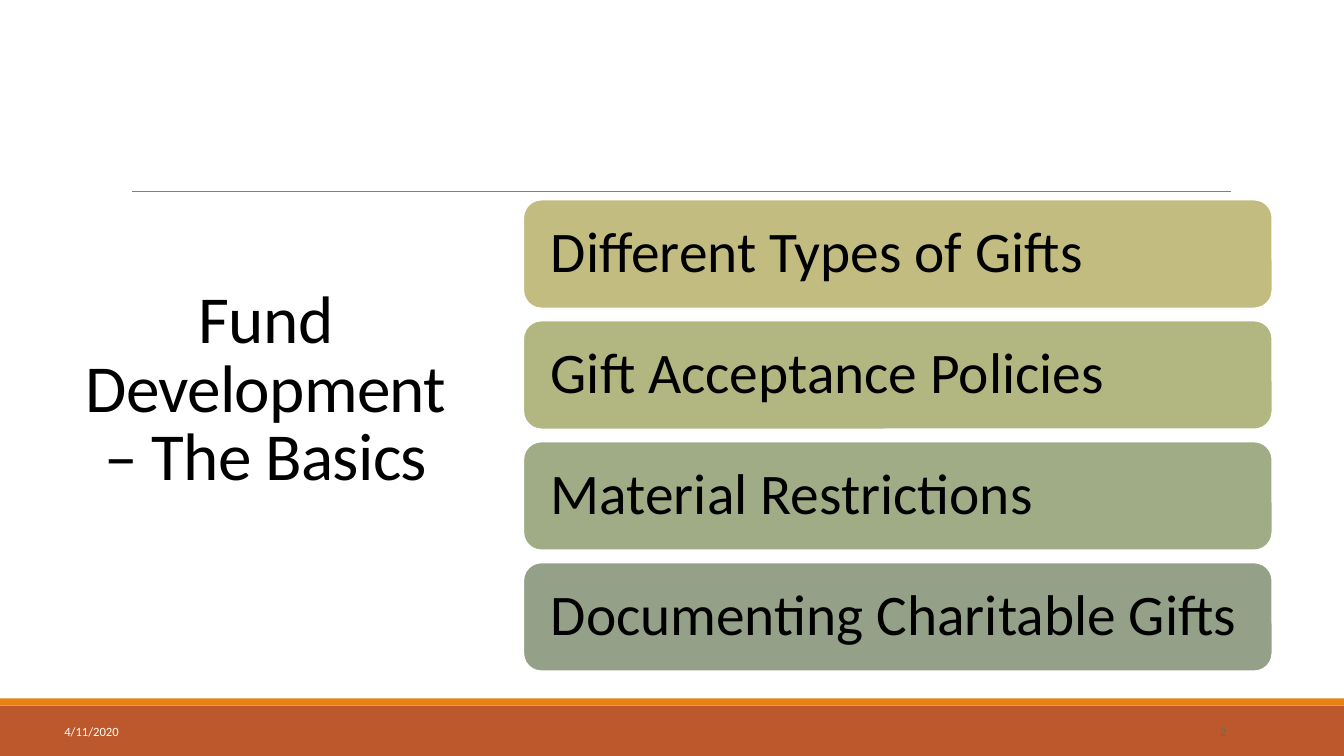
from pptx import Presentation
from pptx.dml.color import RGBColor
from pptx.enum.shapes import MSO_CONNECTOR, MSO_SHAPE
from pptx.enum.text import MSO_ANCHOR, PP_ALIGN
from pptx.oxml.ns import qn
from pptx.util import Inches, Pt
from lxml import etree

STRAIGHT = MSO_CONNECTOR.STRAIGHT
RECTANGLE = MSO_SHAPE.RECTANGLE
ROUNDED = MSO_SHAPE.ROUNDED_RECTANGLE
MIDDLE = MSO_ANCHOR.MIDDLE
LEFT, CENTER, RIGHT = PP_ALIGN.LEFT, PP_ALIGN.CENTER, PP_ALIGN.RIGHT

COLORS = {
    "white": "FFFFFF", "black": "000000", "rule": "808080",
    "footer": "BD582C", "stripe": "E48312", "number": "637052",
    "khaki": "C2BC80", "olive": "B2B782", "sage": "A0AC85", "moss": "94A088",
}
TOPICS = [
    ("Different Types of Gifts", "khaki"),
    ("Gift Acceptance Policies", "olive"),
    ("Material Restrictions", "sage"),
    ("Documenting Charitable Gifts", "moss"),
]
TOPIC_TOP, TOPIC_STEP = 1.98, 1.2


class SlideBuilder:
    """Draws styled elements on one slide."""

    def __init__(self, slide, font_name):
        self.slide = slide
        self.font_name = font_name

    def color(self, name):
        return RGBColor.from_string(COLORS[name])

    def set_text(self, shape, text, size, color, align=LEFT, spacing=1.0, inset=0.1):
        frame = shape.text_frame
        frame.word_wrap = True
        frame.vertical_anchor = MIDDLE
        frame.margin_left = frame.margin_right = Inches(inset)
        frame.text = text
        paragraph = frame.paragraphs[0]
        paragraph.alignment = align
        paragraph.line_spacing = spacing
        paragraph.font.name = self.font_name
        paragraph.font.size = Pt(size)
        paragraph.font.color.rgb = self.color(color)
        return frame

    def box(self, kind, left, top, width, height, fill, outline=None):
        shape = self.slide.shapes.add_shape(
            kind, Inches(left), Inches(top), Inches(width), Inches(height))
        shape.shadow.inherit = False
        shape.fill.solid()
        shape.fill.fore_color.rgb = self.color(fill)
        if outline:
            shape.line.color.rgb = self.color(outline)
            shape.line.width = Pt(1.25)
        else:
            shape.line.fill.background()
        return shape

    def rule(self, left, right, top):
        line = self.slide.shapes.add_connector(
            STRAIGHT, Inches(left), Inches(top), Inches(right), Inches(top))
        line.line.color.rgb = self.color("rule")
        line.line.width = Pt(0.5)
        etree.SubElement(line._element.spPr, qn("a:effectLst"))

    def title(self, text, left, top, width, height):
        title = self.slide.shapes.title
        title.left, title.top = Inches(left), Inches(top)
        title.width, title.height = Inches(width), Inches(height)
        frame = self.set_text(title, text, 48, "black", CENTER, 0.85)
        frame.margin_bottom = Inches(0.73)
        frame.paragraphs[0].runs[0]._r.get_or_add_rPr().set("spc", "-50")

    def label(self, text, left, top, width, height, color, align=LEFT):
        shape = self.slide.shapes.add_textbox(
            Inches(left), Inches(top), Inches(width), Inches(height))
        self.set_text(shape, text, 9, color, align)

    def topic(self, text, top, fill):
        shape = self.box(ROUNDED, 5.19, top, 7.43, 1.08, fill, "white")
        self.set_text(shape, text, 41, "black", spacing=0.9, inset=0.22)


def main():
    presentation = Presentation()
    presentation.slide_width = Inches(13.33)
    presentation.slide_height = Inches(7.5)
    slide = presentation.slides.add_slide(presentation.slide_layouts[5])
    builder = SlideBuilder(slide, "Calibri")

    builder.box(RECTANGLE, 0, 7, 13.33, 0.5, "footer")
    builder.box(RECTANGLE, 0, 6.93, 13.33, 0.07, "stripe")
    builder.rule(1.31, 12.21, 1.9)
    builder.title("Fund Development – The Basics", 0.54, 1.57, 4.19, 5.31)
    builder.label("4/11/2020", 0.54, 7.06, 1.9, 0.4, "white")
    builder.label("2", 10.96, 7.06, 1.3, 0.4, "number", RIGHT)
    for index, (text, fill) in enumerate(TOPICS):
        builder.topic(text, TOPIC_TOP + index * TOPIC_STEP, fill)

    presentation.save("out.pptx")


if __name__ == "__main__":
    main()
